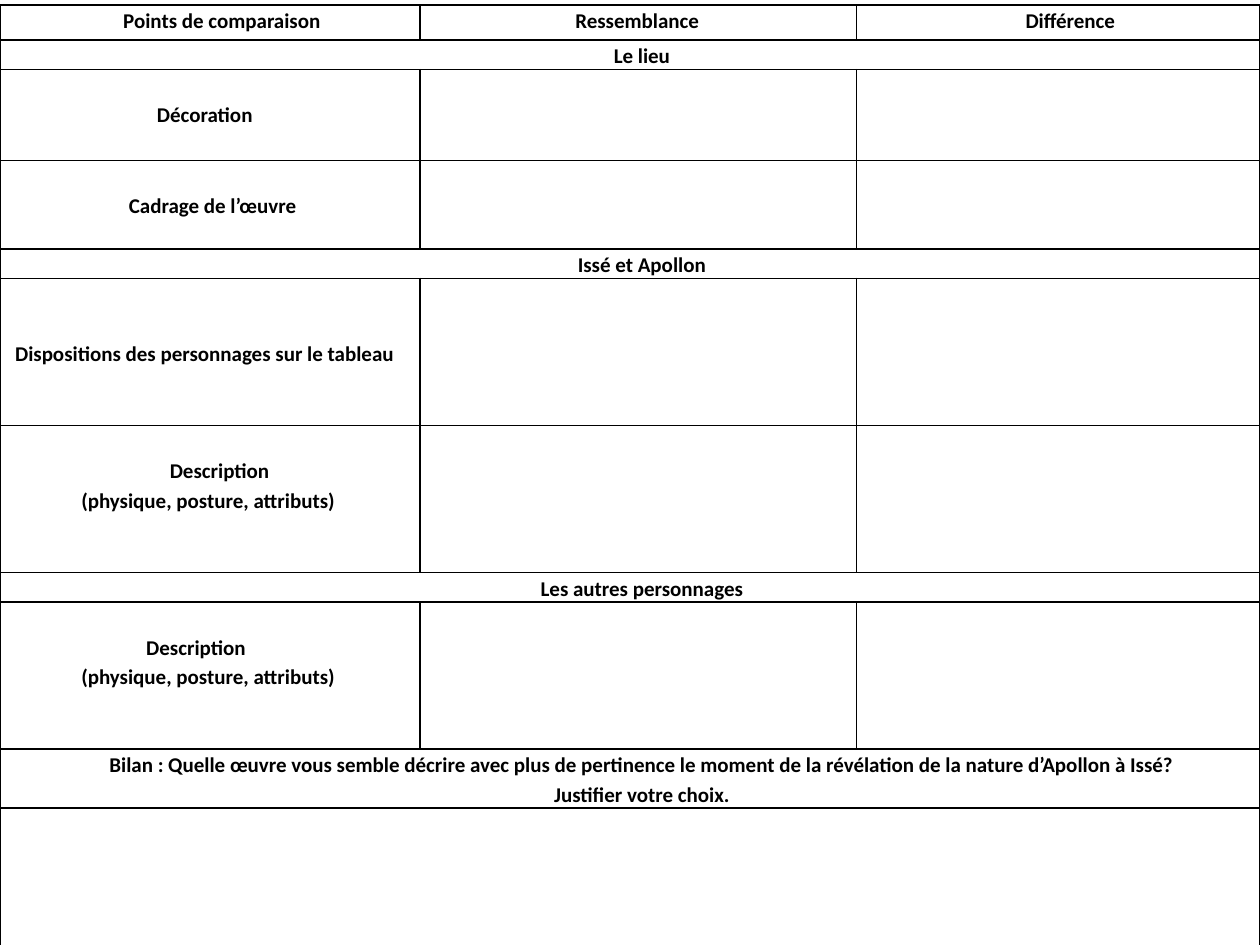
from dataclasses import dataclass

from lxml.etree import SubElement
from pptx import Presentation
from pptx.dml.color import RGBColor as RGB
from pptx.enum.text import MSO_ANCHOR as Anchor, PP_ALIGN as Align
from pptx.oxml import parse_xml
from pptx.oxml.ns import nsdecls, qn
from pptx.util import Pt

COLORS = {"ink": "000000", "paper": "FFFFFF"}
FONT = {"name": "Calibri", "size": Pt(12), "bold": True}
PARA = {"alignment": Align.CENTER, "line_spacing": 1.15}
LINE = 16.8                 # height of one line of text
COL_WIDTHS = (240, 249.6, 230.4)
DETAIL = "(physique, posture, attributs)"


@dataclass
class Label:
    """One paragraph with its side indents in points."""
    text: str
    left: float = 49.7
    right: float = 36


@dataclass
class Row:
    height: float
    cells: tuple = ()       # each cell is a tuple of labels
    lead: int = 0           # lines of space above the text
    merged: bool = False


def band(text: str, lines: int = 1) -> Row:
    """A row with one heading across all columns."""
    return Row(LINE * lines, ((Label(text),),), merged=True)


def criterion(height: float, lead: int, *labels: Label) -> Row:
    """A row with a named criterion and two cells to fill in."""
    return Row(height, (labels,), lead)


ROWS = (
    Row(20, ((Label("Points de comparaison"),),
             (Label("Ressemblance", right=51),),
             (Label("Différence"),))),
    band("Le lieu"),
    criterion(52, 1, Label("Décoration", 0, 6)),
    criterion(50.6, 1, Label("Cadrage de l’œuvre", 3, 0)),
    band("Issé et Apollon"),
    criterion(84, 2, Label("Dispositions des personnages sur le tableau", 0, 6)),
    criterion(84, 1, Label("Description", 47), Label(DETAIL, 0, 2)),
    band("Les autres personnages"),
    criterion(84, 1, Label("Description", 0, 16), Label(DETAIL, 0, 2)),
    band("Bilan : Quelle œuvre vous semble décrire avec plus de pertinence "
         "le moment de la révélation de la nature d’Apollon à Issé? "
         "Justifier votre choix.", 2),
    Row(84, merged=True),
)


def apply(target, values: dict) -> None:
    for name, value in values.items():
        setattr(target, name, value)


def style_cell(cell, lead: int) -> None:
    """Set insets, fill and the four borders."""
    apply(cell, {"margin_left": Pt(3), "margin_right": Pt(3),
                 "margin_top": Pt(LINE * lead), "margin_bottom": 0,
                 "vertical_anchor": Anchor.TOP})
    cell.fill.solid()
    cell.fill.fore_color.rgb = RGB.from_string(COLORS["paper"])
    tc_pr = cell._tc.get_or_add_tcPr()
    for i, side in enumerate("LRTB"):
        ln = parse_xml(f'<a:ln{side} {nsdecls("a")} w="{Pt(1)}"/>')
        fill = SubElement(ln, qn("a:solidFill"))
        SubElement(fill, qn("a:srgbClr"), val=COLORS["ink"])
        tc_pr.insert(i, ln)


def write_labels(cell, labels: tuple) -> None:
    tf = cell.text_frame
    for i, label in enumerate(labels):
        p = tf.add_paragraph() if i else tf.paragraphs[0]
        apply(p, PARA)
        p_pr = p._p.get_or_add_pPr()
        p_pr.set("marL", str(Pt(label.left)))
        p_pr.set("marR", str(Pt(label.right)))
        r = p.add_run()
        r.text = label.text
        apply(r.font, FONT)
        r.font.color.rgb = RGB.from_string(COLORS["ink"])


def draw_table(s, rows: tuple) -> None:
    height = sum(row.height for row in rows)
    table = s.shapes.add_table(len(rows), len(COL_WIDTHS), 0, Pt(2.9),
                               Pt(sum(COL_WIDTHS)), Pt(height)).table
    apply(table, {"first_row": False, "horz_banding": False})
    for col, width in zip(table.columns, COL_WIDTHS):
        col.width = Pt(width)
    for i, row in enumerate(rows):
        table.rows[i].height = Pt(row.height)
        cells = list(table.rows[i].cells)
        for j, cell in enumerate(cells):
            style_cell(cell, 0 if j else row.lead)
        if row.merged:
            cells[0].merge(cells[-1])
        for cell, labels in zip(cells, row.cells):
            write_labels(cell, labels)


def main() -> None:
    prs = Presentation()
    apply(prs, {"slide_width": Pt(720), "slide_height": Pt(540)})
    s = prs.slides.add_slide(prs.slide_layouts[6])
    # Comparison grid filling the slide
    draw_table(s, ROWS)
    prs.save("out.pptx")


if __name__ == "__main__":
    main()
